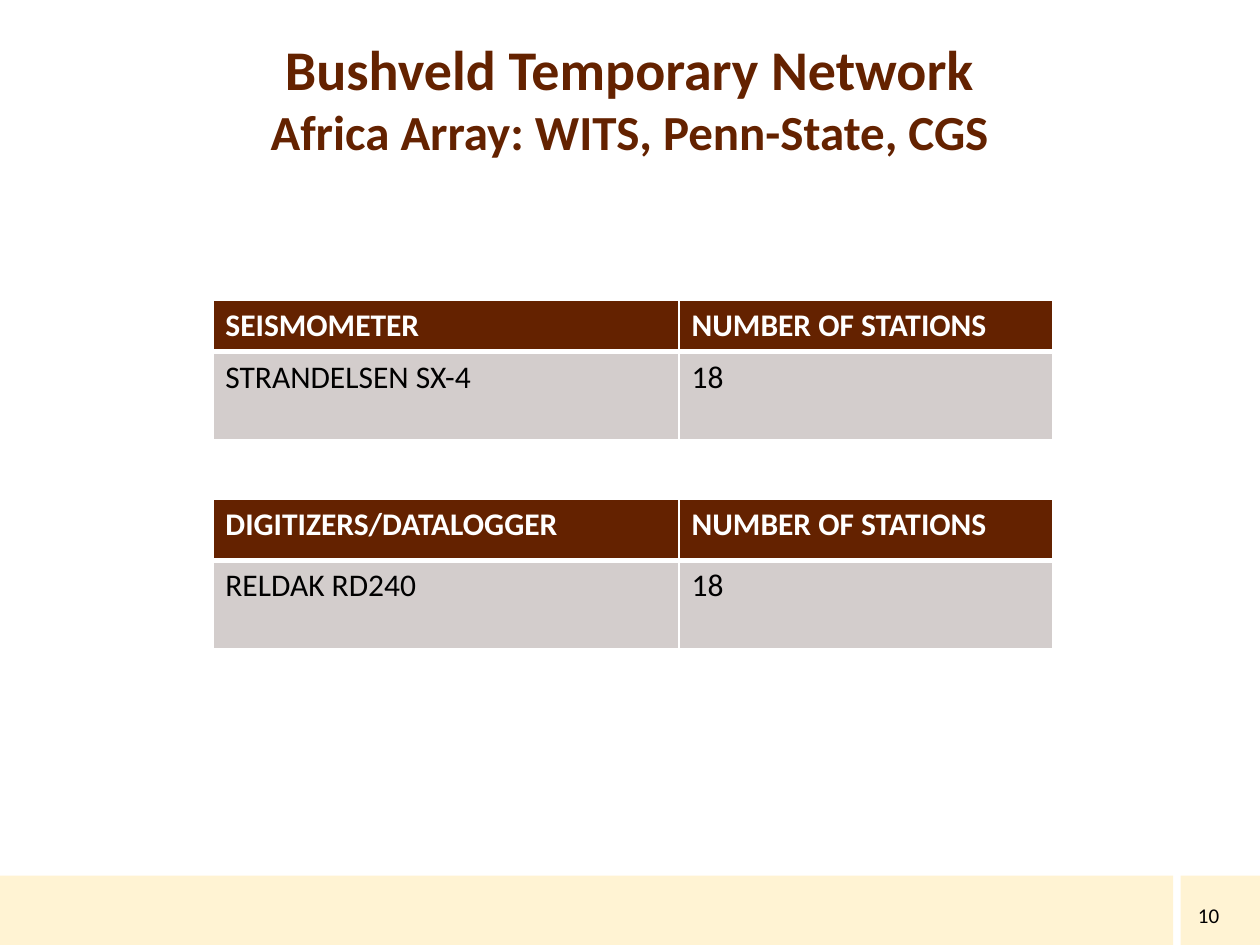
from lxml import etree
from pptx import Presentation
from pptx.dml.color import RGBColor
from pptx.enum import shapes, text
from pptx.oxml.ns import qn
from pptx.util import Cm, Pt

BROWN = RGBColor(0x64, 0x22, 0x00)
CREAM = RGBColor(0xFF, 0xF3, 0xD3)
GREY = RGBColor(0xD3, 0xCD, 0xCC)
WHITE = RGBColor(0xFF, 0xFF, 0xFF)
BLACK = RGBColor(0x00, 0x00, 0x00)

# Content
TITLE = [("Bushveld Temporary Network", 32),
         ("Africa Array: WITS, Penn-State, CGS", 28)]
PAGE = "10"
COUNT = "NUMBER OF STATIONS"
TABLES = [  # top, header height, rows
    (6.05, 1.04, [("SEISMOMETER", COUNT), ("STRANDELSEN SX-4", "18")]),
    (10.06, 1.24, [("DIGITIZERS/DATALOGGER", COUNT), ("RELDAK RD240", "18")]),
]

# Layout in cm
WIDE, HIGH = 25.4, 19.05
BAND, SPLIT, GAP = 17.65, 23.65, 0.15
LEFT, COLS, BODY = 4.29, (9.4, 7.54), 1.78


def write(par, words, size=18, color=BLACK, bold=False):
    run = par.add_run()
    run.text = words
    font = run.font
    font.name, font.size, font.bold = "Calibri", Pt(size), bold
    font.color.rgb = color


def edge(cell, side, width):
    line = etree.SubElement(cell._tc.get_or_add_tcPr(), qn("a:" + side),
                            w=str(Pt(width)))
    fill = etree.SubElement(line, qn("a:solidFill"))
    etree.SubElement(fill, qn("a:srgbClr"), val=str(WHITE))


def add_grid(slide, top, head, rows):
    high = head + BODY * (len(rows) - 1)
    grid = slide.shapes.add_table(len(rows), len(COLS), Cm(LEFT), Cm(top),
                                  Cm(sum(COLS)), Cm(high)).table
    for col, width in zip(grid.columns, COLS):
        col.width = Cm(width)
    for r, row in enumerate(rows):
        first = r == 0
        grid.rows[r].height = Cm(head if first else BODY)
        for c, words in enumerate(row):
            cell = grid.cell(r, c)
            for side in ("lnL", "lnR", "lnT", "lnB"):
                thick = side == ("lnB" if first else "lnT") and r < 2
                edge(cell, side, 3 if thick else 1)
            cell.fill.solid()
            cell.fill.fore_color.rgb = BROWN if first else GREY
            write(cell.text_frame.paragraphs[0], words, bold=first,
                  color=WHITE if first else BLACK)


def main():
    deck = Presentation()
    deck.slide_width, deck.slide_height = Cm(WIDE), Cm(HIGH)
    slide = deck.slides.add_slide(deck.slide_layouts[5])

    # Footer band
    for left, right in ((SPLIT + GAP, WIDE), (0, SPLIT)):
        bar = slide.shapes.add_shape(
            shapes.MSO_SHAPE.RECTANGLE, Cm(left), Cm(BAND),
            Cm(right - left), Cm(HIGH - BAND))
        bar.shadow.inherit = False
        bar.fill.solid()
        bar.fill.fore_color.rgb = CREAM
        bar.line.fill.background()

    # Title
    title = slide.shapes.title
    title.left, title.top = Cm(0.69), Cm(0.74)
    title.width, title.height = Cm(24), Cm(2.44)
    frame = title.text_frame
    frame.auto_size = text.MSO_AUTO_SIZE.NONE
    frame.vertical_anchor = text.MSO_ANCHOR.MIDDLE
    par = frame.paragraphs[0]
    par.alignment = text.PP_ALIGN.CENTER
    for i, (words, size) in enumerate(TITLE):
        if i:
            par.add_line_break()
        write(par, words, size=size, color=BROWN, bold=True)

    # Page number
    box = slide.shapes.add_textbox(Cm(23.9), Cm(18.14), Cm(1.2), Cm(0.6))
    frame = box.text_frame
    frame.word_wrap = True
    frame.margin_top = frame.margin_bottom = 0
    frame.vertical_anchor = text.MSO_ANCHOR.MIDDLE
    write(frame.paragraphs[0], PAGE, size=12)

    # Tables
    for top, head, rows in TABLES:
        add_grid(slide, top, head, rows)
    deck.save("out.pptx")


if __name__ == "__main__":
    main()
